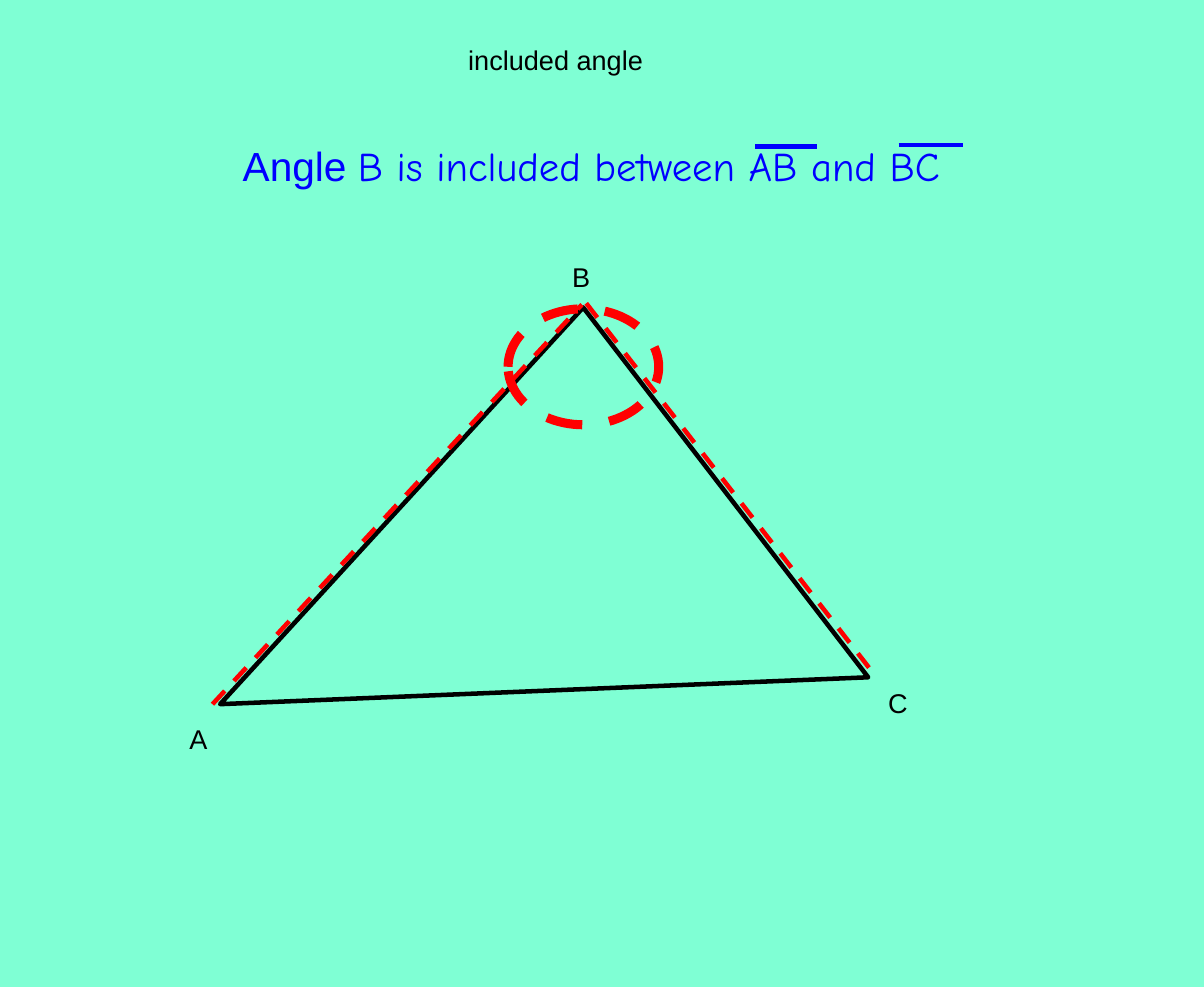
"""Slide showing the angle included between two sides of a triangle."""
from lxml.etree import SubElement
from pptx import Presentation
from pptx.dml.color import RGBColor
from pptx.enum.dml import MSO_LINE as DASH
from pptx.enum.shapes import MSO_CONNECTOR as CONN, MSO_SHAPE as SHAPE
from pptx.enum.text import MSO_ANCHOR as ANCHOR, MSO_AUTO_SIZE as FIT, PP_ALIGN as ALIGN
from pptx.oxml.ns import qn
from pptx.util import Cm, Pt

AQUA = RGBColor(0x7F, 0xFF, 0xD4)
BLACK = RGBColor(0, 0, 0)
BLUE = RGBColor(0, 0, 255)
RED = RGBColor(255, 0, 0)

FRAME = {"word_wrap": True, "auto_size": FIT.NONE, "vertical_anchor": ANCHOR.TOP}


def write(sp, runs, size, color):
    tf = sp.text_frame
    for name, value in FRAME.items():
        setattr(tf, name, value)
    p = tf.paragraphs[0]
    p.alignment = ALIGN.LEFT
    for text, face in runs:
        r = p.add_run()
        r.text = text
        for name, value in {"name": face, "size": Pt(size)}.items():
            setattr(r.font, name, value)
        r.font.color.rgb = color


def stroke(sp, color, width, dash=None):
    sp.line.color.rgb = color
    for name, value in {"width": Pt(width), "dash_style": dash}.items():
        setattr(sp.line, name, value)


prs = Presentation()
prs.slide_width, prs.slide_height = Cm(28.22), Cm(23.14)
s = prs.slides.add_slide(prs.slide_layouts[5])
s.background.fill.solid()
s.background.fill.fore_color.rgb = AQUA

title = s.shapes.title
place = {"left": 10.72, "top": 0.89, "width": 5.99, "height": 1.02}
for name, value in place.items():
    setattr(title, name, Cm(value))
write(title, [("included angle", "Arial")], 18, BLACK)

corners = [(Cm(x), Cm(y)) for x, y in [(20.35, 15.88), (5.16, 16.51), (13.67, 7.21)]]
outline = s.shapes.build_freeform(*corners[0])
outline.add_line_segments(corners[1:], close=True)
triangle = outline.convert_to_shape()
triangle.shadow.inherit = False
triangle.fill.background()
stroke(triangle, BLACK, 3)

for letter, x, y in [("A", 4.19, 16.81), ("B", 13.16, 5.97), ("C", 20.57, 15.98)]:
    label = s.shapes.add_textbox(Cm(x), Cm(y), Cm(1), Cm(1.02))
    write(label, [(letter, "Arial")], 18, BLACK)

sentence = s.shapes.add_textbox(Cm(5.44), Cm(3.18), Cm(21), Cm(1.42))
write(sentence, [("Angle ", "Arial"),
                 ("B is included between AB and BC", "Comic Neue")], 27, BLUE)

lines = [
    (17.7, 3.43, 19.15, 3.43, BLUE, None),
    (21.06, 3.4, 22.56, 3.4, BLUE, None),
    (4.98, 16.51, 13.64, 7.14, RED, DASH.DASH),
    (13.74, 7.11, 20.42, 15.72, RED, DASH.DASH),
]
for x1, y1, x2, y2, color, dash in lines:
    line = s.shapes.add_connector(CONN.STRAIGHT, Cm(x1), Cm(y1), Cm(x2), Cm(y2))
    stroke(line, color, 3, dash)
    SubElement(line._element.spPr, qn("a:effectLst"))

ring = s.shapes.add_shape(SHAPE.OVAL, Cm(11.91), Cm(7.24), Cm(3.53), Cm(2.72))
ring.shadow.inherit = False
ring.fill.background()
stroke(ring, RED, 6, DASH.DASH)

prs.save("out.pptx")
